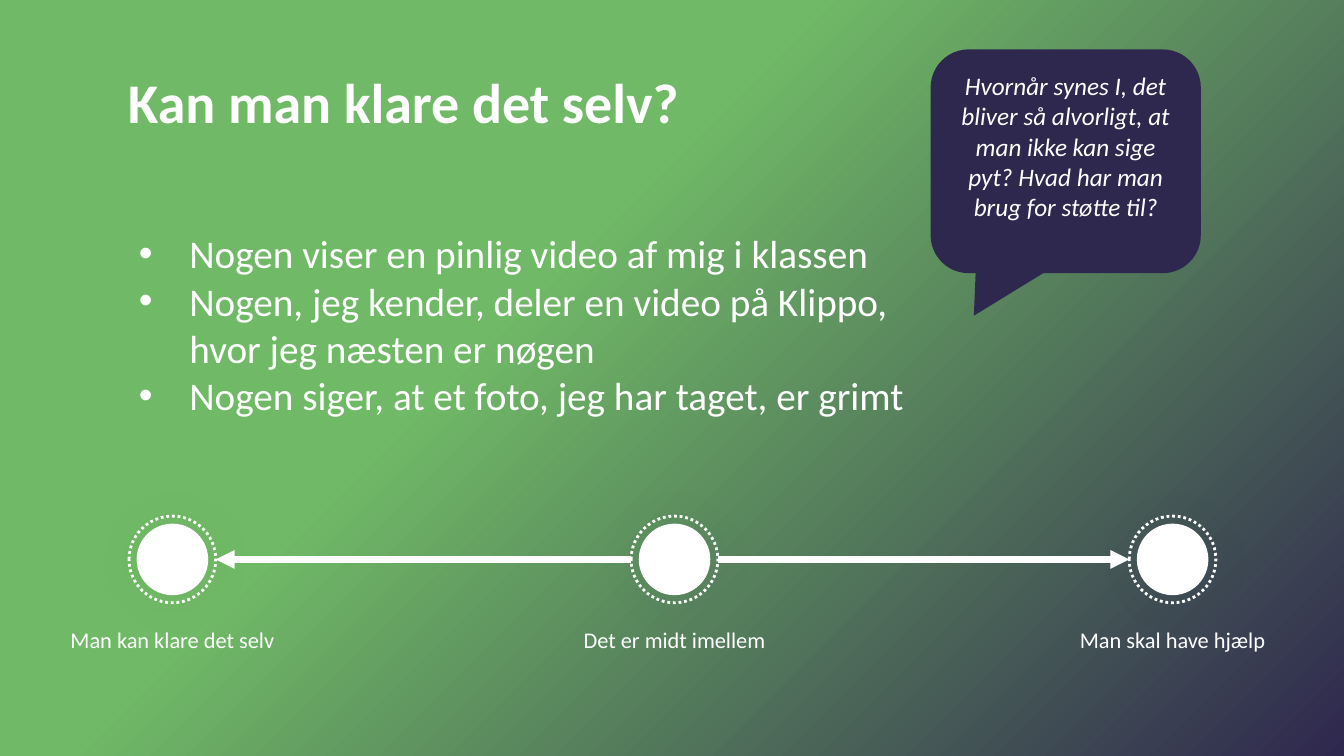
from lxml.etree import SubElement
from pptx import Presentation
from pptx.dml.color import RGBColor
from pptx.enum.dml import MSO_LINE
from pptx.enum.shapes import MSO_CONNECTOR, MSO_SHAPE
from pptx.enum.text import MSO_ANCHOR, PP_ALIGN
from pptx.oxml.ns import qn
from pptx.util import Inches, Pt

WHITE, GREEN, NAVY = "FFFFFF", "70B966", "2F284E"


def color(hex_code):
    return RGBColor.from_string(hex_code)


def write(box, lines, size, align=PP_ALIGN.LEFT, spacing=1.0, **looks):
    """Fill a shape with white paragraphs and return them."""
    frame = box.text_frame
    frame.word_wrap = True
    for number, line in enumerate(lines):
        para = frame.add_paragraph() if number else frame.paragraphs[0]
        para.text = line
        para.alignment = align
        para.line_spacing = spacing
        for span in para.runs:
            span.font.color.rgb = color(WHITE)
            formats = {"name": "Calibri", "size": Pt(size), **looks}
            for name, value in formats.items():
                setattr(span.font, name, value)
    return frame.paragraphs


deck = Presentation()
deck.slide_width, deck.slide_height = Inches(13.33), Inches(7.5)
page = deck.slides.add_slide(deck.slide_layouts[6])
shapes = page.shapes

# Background: green to navy, towards the lower right corner
backdrop = page.background.fill
backdrop.gradient()
backdrop.gradient_angle = 315
for stop, position, shade in zip(backdrop.gradient_stops, (0.39, 1), (GREEN, NAVY)):
    stop.position = position
    stop.color.rgb = color(shade)

# Title and bullets
title = shapes.add_textbox(Inches(1.17), Inches(0.61), Inches(11.05), Inches(0.78))
title.text_frame.vertical_anchor = MSO_ANCHOR.BOTTOM
write(title, ["Kan man klare det selv?"], 40, spacing=0.9, bold=True)

examples = [
    "Nogen viser en pinlig video af mig i klassen",
    "Nogen, jeg kender, deler en video på Klippo,\nhvor jeg næsten er nøgen",
    "Nogen siger, at et foto, jeg har taget, er grimt",
]
bullets = shapes.add_textbox(Inches(1.28), Inches(2.23), Inches(10.78), Inches(1.99))
for para in write(bullets, examples, 28):
    props = para._p.get_or_add_pPr()
    props.set("marL", str(Inches(0.5)))
    props.set("indent", str(-Inches(0.5)))
    SubElement(props, qn("a:buFont"), typeface="Arial")
    SubElement(props, qn("a:buChar"), char="•")

# Speech bubble
bubble = shapes.add_shape(MSO_SHAPE.ROUNDED_RECTANGULAR_CALLOUT,
                          Inches(9.23), Inches(0.49), Inches(2.68), Inches(2.22))
for index, value in enumerate((-0.34, 0.69, 0.17)):
    bubble.adjustments[index] = value
bubble.shadow.inherit = False
bubble.fill.solid()
bubble.fill.fore_color.rgb = color(NAVY)
bubble.line.fill.background()
bubble.text_frame.vertical_anchor = MSO_ANCHOR.MIDDLE
bubble.text_frame.margin_bottom = Inches(0.35)
question = ("Hvornår synes I, det bliver så alvorligt, at man ikke kan sige pyt? "
            "Hvad har man brug for støtte til?")
write(bubble, [question], 18, PP_ALIGN.CENTER, italic=True)

# Scale: a dotted ring, a disc and a label at each stop
ring_size, disc_size, label_width = 0.86, 0.71, 3.14
axis = 5.55
centers = (1.71, 6.69, 11.63)
labels = ("Man kan klare det selv", "Det er midt imellem", "Man skal have hjælp")

for center, text in zip(centers, labels):
    ring, disc = (
        shapes.add_shape(MSO_SHAPE.OVAL, Inches(center - size / 2),
                         Inches(axis - size / 2), Inches(size), Inches(size))
        for size in (ring_size, disc_size)
    )
    ring.fill.background()
    ring.line.color.rgb = color(WHITE)
    ring.line.width = Pt(2)
    ring.line.dash_style = MSO_LINE.ROUND_DOT
    ring.shadow.inherit = False
    effects = ring._element.spPr.find(qn("a:effectLst"))
    shadow = SubElement(effects, qn("a:outerShdw"), blurRad=str(Pt(31.7)),
                        dist=str(Pt(3)), dir="2700000", rotWithShape="0")
    black = SubElement(shadow, qn("a:srgbClr"), val="000000")
    SubElement(black, qn("a:alpha"), val="26000")

    disc.shadow.inherit = False
    disc.fill.solid()
    disc.fill.fore_color.rgb = color(WHITE)
    disc.line.fill.background()

    label = shapes.add_textbox(Inches(center - label_width / 2), Inches(6.19),
                               Inches(label_width), Inches(0.33))
    write(label, [text], 16, PP_ALIGN.CENTER, spacing=0.9)

# Arrows from the middle ring to both ends
left, middle, right = centers
radius = ring_size / 2
for start, end in ((middle - radius, left + radius), (middle + radius, right - radius)):
    arrow = shapes.add_connector(MSO_CONNECTOR.STRAIGHT, Inches(start), Inches(axis),
                                 Inches(end), Inches(axis))
    arrow.line.color.rgb = color(WHITE)
    arrow.line.width = Pt(4.5)
    SubElement(arrow.line._get_or_add_ln(), qn("a:tailEnd"), type="triangle")
    SubElement(arrow._element.spPr, qn("a:effectLst"))

deck.save("out.pptx")
